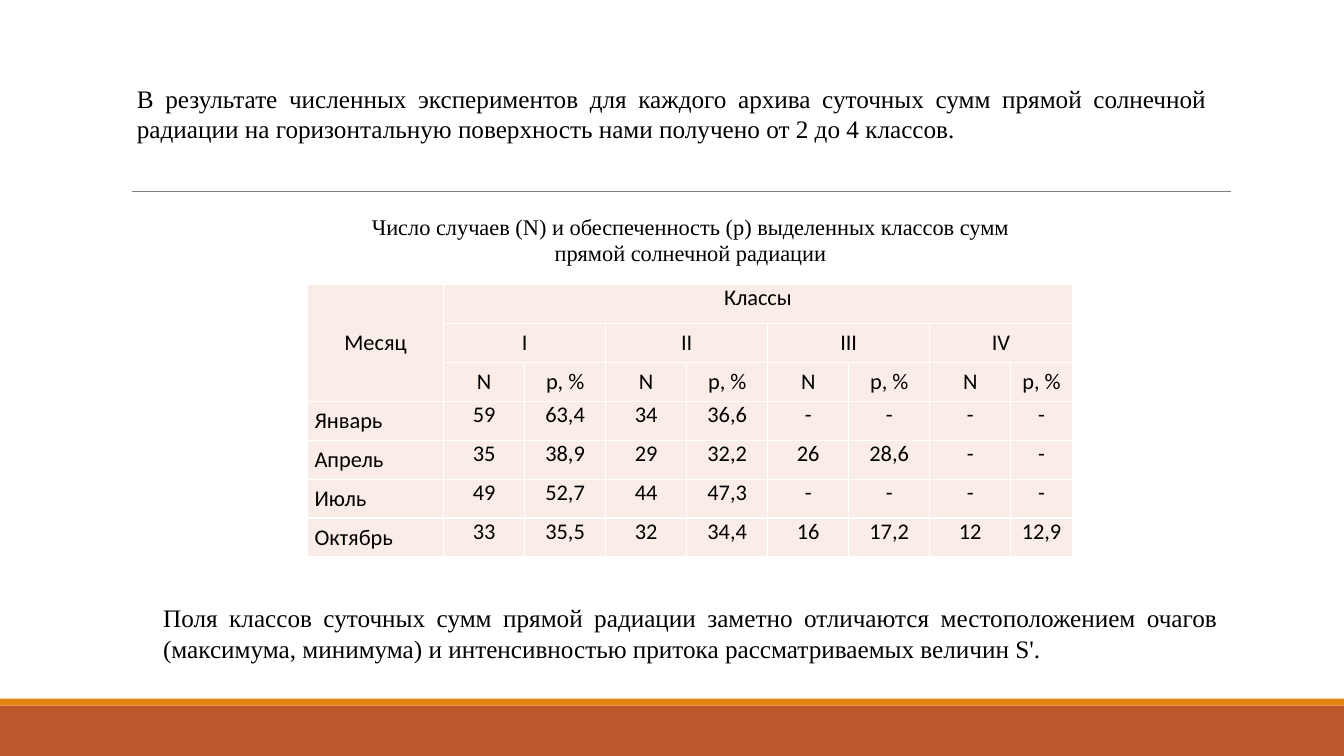
from lxml.etree import SubElement
from pptx import Presentation
from pptx.dml.color import RGBColor
from pptx.enum.shapes import MSO_CONNECTOR, MSO_SHAPE
from pptx.enum.text import MSO_ANCHOR, PP_ALIGN
from pptx.oxml import parse_xml
from pptx.oxml.ns import nsdecls, qn
from pptx.util import Inches, Pt

WIDTH, HEIGHT = Inches(13.33), Inches(7.5)
SERIF, SANS = "Times New Roman", "Calibri"
INTRO = ("В результате численных экспериментов для каждого архива суточных сумм "
         "прямой солнечной радиации на горизонтальную поверхность нами получено "
         "от 2 до 4 классов.")
CAPTION = ("Число случаев (N) и обеспеченность (р) выделенных классов сумм "
           "прямой солнечной радиации")
CLOSING = ("Поля классов суточных сумм прямой радиации заметно отличаются "
           "местоположением очагов (максимума, минимума) и интенсивностью притока "
           "рассматриваемых величин S'.")
CLASSES = ["I", "II", "III", "IV"]
MONTHS = [
    ["Январь", "59", "63,4", "34", "36,6", "-", "-", "-", "-"],
    ["Апрель", "35", "38,9", "29", "32,2", "26", "28,6", "-", "-"],
    ["Июль", "49", "52,7", "44", "47,3", "-", "-", "-", "-"],
    ["Октябрь", "33", "35,5", "32", "34,4", "16", "17,2", "12", "12,9"],
]
HEADER_ROWS = 3
COLUMN_WIDTHS = [10.13] + [6.03] * 7 + [4.58]
ROW_HEIGHT = 5.16


def color(value):
    return RGBColor.from_string(value)


def px(percent):
    return round(WIDTH * percent / 100)


def py(percent):
    return round(HEIGHT * percent / 100)


def add_bar(s, top, height, fill):
    sp = s.shapes.add_shape(MSO_SHAPE.RECTANGLE, 0, py(top), WIDTH, py(height))
    sp.shadow.inherit = False
    sp.fill.solid()
    sp.fill.fore_color.rgb = color(fill)
    sp.line.fill.background()


def add_rule(s, left, right, y):
    line = s.shapes.add_connector(MSO_CONNECTOR.STRAIGHT, px(left), py(y), px(right), py(y))
    line.line.color.rgb = color("808080")
    line.line.width = Pt(0.5)
    SubElement(line._element.spPr, qn("a:effectLst"))


def format_paragraph(p, font, size, align):
    p.alignment = align
    p.font.name = font
    p.font.size = Pt(size)
    p.font.color.rgb = color("000000")


def add_text(s, left, top, width, height, text, size, align):
    sp = s.shapes.add_textbox(px(left), py(top), px(width), py(height))
    tf = sp.text_frame
    tf.word_wrap = True
    tf.text = text
    format_paragraph(tf.paragraphs[0], SERIF, size, align)


def format_cell(cell, text, align, anchor):
    cell.text = text
    cell.margin_left = cell.margin_right = Inches(0.07)
    cell.margin_top = cell.margin_bottom = 0
    cell.vertical_anchor = anchor
    format_paragraph(cell.text_frame.paragraphs[0], SANS, 16, align)
    tc_pr = cell._tc.get_or_add_tcPr()
    for side in ("lnL", "lnR", "lnT", "lnB"):
        tc_pr.append(parse_xml(
            f'<a:{side} {nsdecls("a")} w="{Pt(1)}"><a:solidFill>'
            f'<a:srgbClr val="FFFFFF"/></a:solidFill></a:{side}>'))
    cell.fill.solid()
    cell.fill.fore_color.rgb = color("FAEDE7")


def add_class_table(s, left, top):
    rows = [
        ["Месяц", "Классы"] + [""] * 7,
        [""] + [text for name in CLASSES for text in (name, "")],
        [""] + ["N", "p, %"] * len(CLASSES),
    ] + MONTHS
    frame = s.shapes.add_table(len(rows), len(COLUMN_WIDTHS), px(left), py(top),
                               px(sum(COLUMN_WIDTHS)), py(ROW_HEIGHT * len(rows)))
    table = frame.table
    table.first_row = table.horz_banding = False
    for column, width in zip(table.columns, COLUMN_WIDTHS):
        column.width = px(width)
    for i, values in enumerate(rows):
        table.rows[i].height = py(ROW_HEIGHT)
        for j, text in enumerate(values):
            is_month = i >= HEADER_ROWS and j == 0
            is_top = (i == 0 or i >= HEADER_ROWS) and j > 0
            format_cell(table.cell(i, j), text,
                        PP_ALIGN.LEFT if is_month else PP_ALIGN.CENTER,
                        MSO_ANCHOR.TOP if is_top else MSO_ANCHOR.MIDDLE)
    table.cell(0, 0).merge(table.cell(HEADER_ROWS - 1, 0))
    table.cell(0, 1).merge(table.cell(0, len(COLUMN_WIDTHS) - 1))
    for j in range(1, len(COLUMN_WIDTHS), 2):
        table.cell(1, j).merge(table.cell(1, j + 1))


def main():
    prs = Presentation()
    prs.slide_width, prs.slide_height = WIDTH, HEIGHT
    s = prs.slides.add_slide(prs.slide_layouts[6])
    add_bar(s, 93.33, 6.67, "BD582C")
    add_bar(s, 92.4, 0.93, "E48312")
    add_rule(s, 9.83, 91.58, 25.33)
    add_text(s, 9.45, 10.4, 81.08, 9.47, INTRO, 18, PP_ALIGN.JUSTIFY)
    add_text(s, 25.5, 27.47, 51.75, 8.53, CAPTION, 16, PP_ALIGN.CENTER)
    add_class_table(s, 22.88, 37.6)
    add_text(s, 11.4, 79.07, 79.95, 9.47, CLOSING, 18, PP_ALIGN.JUSTIFY)
    prs.save("out.pptx")


if __name__ == "__main__":
    main()
